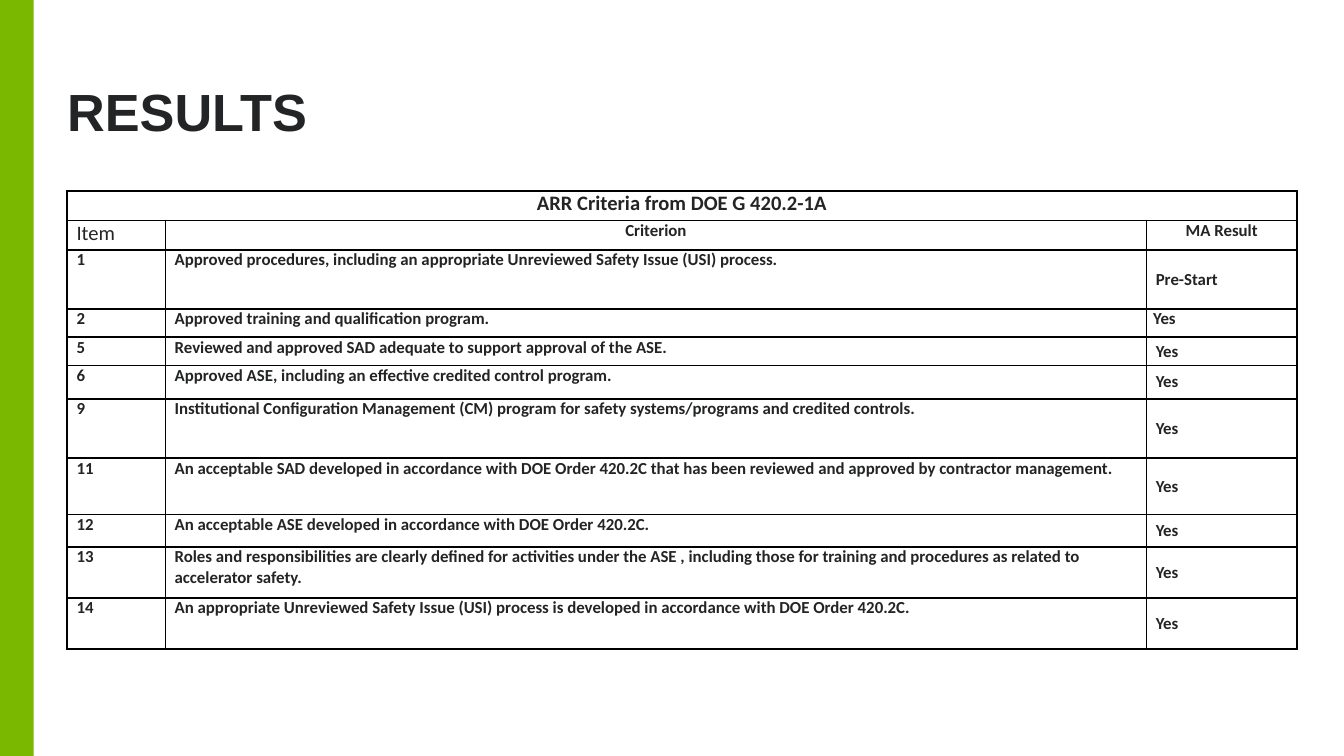
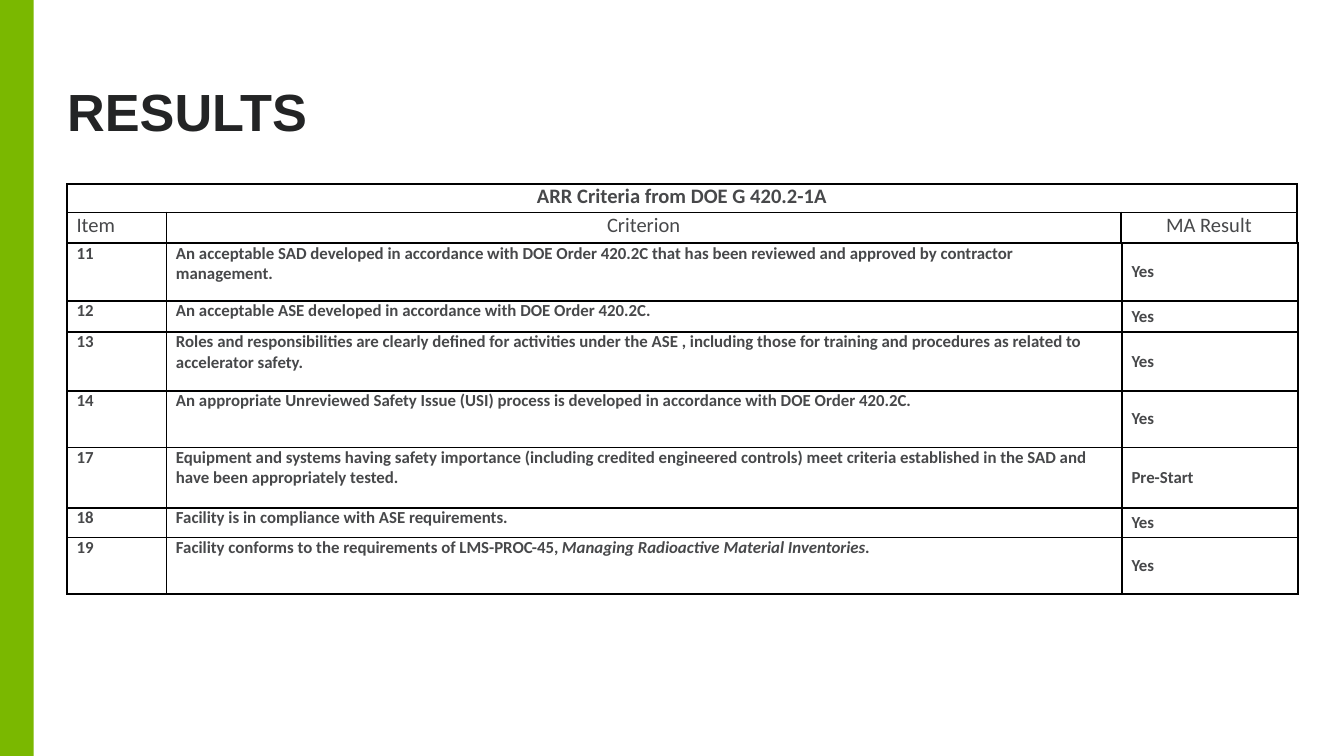
from dataclasses import dataclass

from lxml import etree
from pptx import Presentation
from pptx.dml.color import RGBColor
from pptx.enum.shapes import MSO_SHAPE
from pptx.enum.text import MSO_ANCHOR as Anchor, MSO_AUTO_SIZE, PP_ALIGN as Align
from pptx.oxml.ns import qn
from pptx.slide import Slide
from pptx.table import Table, _Cell as Cell
from pptx.util import Inches, Pt

# Shared look
GREEN = RGBColor(0x7A, 0xB8, 0x00)
INK = RGBColor(0x23, 0x24, 0x25)
GRAY = RGBColor(0x47, 0x48, 0x4A)
BLACK = RGBColor(0x00, 0x00, 0x00)
WHITE = RGBColor(0xFF, 0xFF, 0xFF)
TITLE_FONT, TABLE_FONT = "Arial", "Calibri"
LEFT = 0.5
HEADING = "ARR Criteria from DOE G 420.2-1A"
LABELS = ("Item", "Criterion", "MA Result")
INVENTORIES = "Managing Radioactive Material Inventories"

CRITERIA = {
    1: "Approved procedures, including an appropriate Unreviewed Safety Issue (USI) process.",
    2: "Approved training and qualification program.",
    5: "Reviewed and approved SAD adequate to support approval of the ASE.",
    6: "Approved ASE, including an effective credited control program.",
    9: "Institutional Configuration Management (CM) program for safety "
       "systems/programs and credited controls.",
    11: "An acceptable SAD developed in accordance with DOE Order 420.2C that has "
        "been reviewed and approved by contractor management.",
    12: "An acceptable ASE developed in accordance with DOE Order 420.2C.",
    13: "Roles and responsibilities are clearly defined for activities under the ASE , "
        "including those for training and procedures as related to accelerator safety.",
    14: "An appropriate Unreviewed Safety Issue (USI) process is developed in "
        "accordance with DOE Order 420.2C.",
    17: "Equipment and systems having safety importance (including credited engineered "
        "controls) meet criteria established in the SAD and have been appropriately tested.",
    18: "Facility is in compliance with ASE requirements.",
    19: f"Facility conforms to the requirements of LMS-PROC-45, {INVENTORIES}.",
}


@dataclass(frozen=True)
class Result:
    item: int
    height: float
    result: str = "Yes"
    anchor: Anchor = Anchor.MIDDLE
    inset: float = 0.07


@dataclass(frozen=True)
class TextStyle:
    color: RGBColor
    size: float = 9
    bold: bool = True
    align: Align = Align.LEFT


FIRST_RESULTS = (
    Result(1, 0.44, "Pre-Start"),
    Result(2, 0.21, anchor=Anchor.TOP, inset=0.05),
    Result(5, 0.21),
    Result(6, 0.25),
    Result(9, 0.44),
    Result(11, 0.42),
    Result(12, 0.24),
    Result(13, 0.38),
    Result(14, 0.38),
)
SECOND_RESULTS = (
    Result(11, 0.43),
    Result(12, 0.23),
    Result(13, 0.44),
    Result(14, 0.42),
    Result(17, 0.45, "Pre-Start"),
    Result(18, 0.22),
    Result(19, 0.42),
)


def add_borders(cell: Cell) -> None:
    tc_pr = cell._tc.get_or_add_tcPr()
    for i, side in enumerate(("lnL", "lnR", "lnT", "lnB")):
        line = etree.Element(qn(f"a:{side}"), w=str(Pt(1)))
        fill = etree.SubElement(line, qn("a:solidFill"))
        etree.SubElement(fill, qn("a:srgbClr"), val=str(BLACK))
        tc_pr.insert(i, line)


def write_cell(cell: Cell, text: str, style: TextStyle,
               anchor: Anchor = Anchor.TOP, inset: float = 0.07) -> None:
    cell.margin_left = cell.margin_right = Inches(inset)
    cell.margin_top = cell.margin_bottom = Inches(0)
    cell.vertical_anchor = anchor
    p = cell.text_frame.paragraphs[0]
    p.alignment = style.align
    # The document title inside a criterion is italic
    for part in text.partition(INVENTORIES):
        if part:
            r = p.add_run()
            r.text = part
            r.font.name = TABLE_FONT
            r.font.size = Pt(style.size)
            r.font.bold = style.bold
            r.font.italic = part == INVENTORIES
            r.font.color.rgb = style.color


def add_grid(s: Slide, top: float, widths: tuple[float, ...],
             heights: list[float]) -> Table:
    frame = s.shapes.add_table(len(heights), len(widths), Inches(LEFT), Inches(top),
                               Inches(sum(widths)), Inches(sum(heights)))
    table = frame.table
    table.first_row = table.horz_banding = False
    for column, width in zip(table.columns, widths):
        column.width = Inches(width)
    for row, height in zip(table.rows, heights):
        row.height = Inches(height)
    for cell in table.iter_cells():
        cell.fill.background()
        add_borders(cell)
    return table


def fill_header(table: Table, color: RGBColor, label_style: TextStyle) -> None:
    table.cell(0, 0).merge(table.cell(0, 2))
    write_cell(table.cell(0, 0), HEADING, TextStyle(color, 11, align=Align.CENTER))
    styles = (TextStyle(color, 11, False), label_style, label_style)
    for i, (label, style) in enumerate(zip(LABELS, styles)):
        write_cell(table.cell(1, i), label, style)


def fill_results(table: Table, results: tuple[Result, ...], color: RGBColor,
                 first_row: int = 0) -> None:
    style = TextStyle(color)
    for i, entry in enumerate(results, first_row):
        write_cell(table.cell(i, 0), str(entry.item), style)
        write_cell(table.cell(i, 1), CRITERIA[entry.item], style)
        write_cell(table.cell(i, 2), entry.result, style, entry.anchor, entry.inset)


def add_results_slide(prs: Presentation) -> Slide:
    s = prs.slides.add_slide(prs.slide_layouts[5])
    s.background.fill.solid()
    s.background.fill.fore_color.rgb = WHITE

    # Green side band
    band = s.shapes.add_shape(MSO_SHAPE.RECTANGLE, 0, 0, Inches(0.25), prs.slide_height)
    band.shadow.inherit = False
    band.fill.solid()
    band.fill.fore_color.rgb = GREEN
    band.line.fill.background()

    # Title
    title = s.shapes.title
    title.left, title.top = Inches(LEFT), Inches(0.39)
    title.width, title.height = Inches(9.16), Inches(0.68)
    tf = title.text_frame
    tf.text = "RESULTS"
    tf.auto_size = MSO_AUTO_SIZE.NONE
    tf.word_wrap = True
    tf.vertical_anchor = Anchor.BOTTOM
    tf.margin_left = tf.margin_right = tf.margin_top = tf.margin_bottom = 0
    p = tf.paragraphs[0]
    p.alignment = Align.LEFT
    p.line_spacing = 0.95
    font = p.runs[0].font
    font.name, font.size, font.bold = TITLE_FONT, Pt(28), True
    font.color.rgb = INK
    return s


def main() -> None:
    prs = Presentation()
    prs.slide_width, prs.slide_height = Inches(10), Inches(5.625)

    # Slide 1: header and results in one table
    s = add_results_slide(prs)
    table = add_grid(s, 1.42, (0.73, 7.3, 1.12),
                     [0.22, 0.22] + [entry.height for entry in FIRST_RESULTS])
    fill_header(table, INK, TextStyle(INK, align=Align.CENTER))
    fill_results(table, FIRST_RESULTS, INK, first_row=2)

    # Slide 2: results under a separate header table
    s = add_results_slide(prs)
    table = add_grid(s, 1.81, (0.74, 7.11, 1.31),
                     [entry.height for entry in SECOND_RESULTS])
    fill_results(table, SECOND_RESULTS, GRAY)
    header = add_grid(s, 1.37, (0.74, 7.1, 1.31), [0.21, 0.23])
    fill_header(header, GRAY, TextStyle(GRAY, 11, False, Align.CENTER))

    prs.save("out.pptx")


if __name__ == "__main__":
    main()
